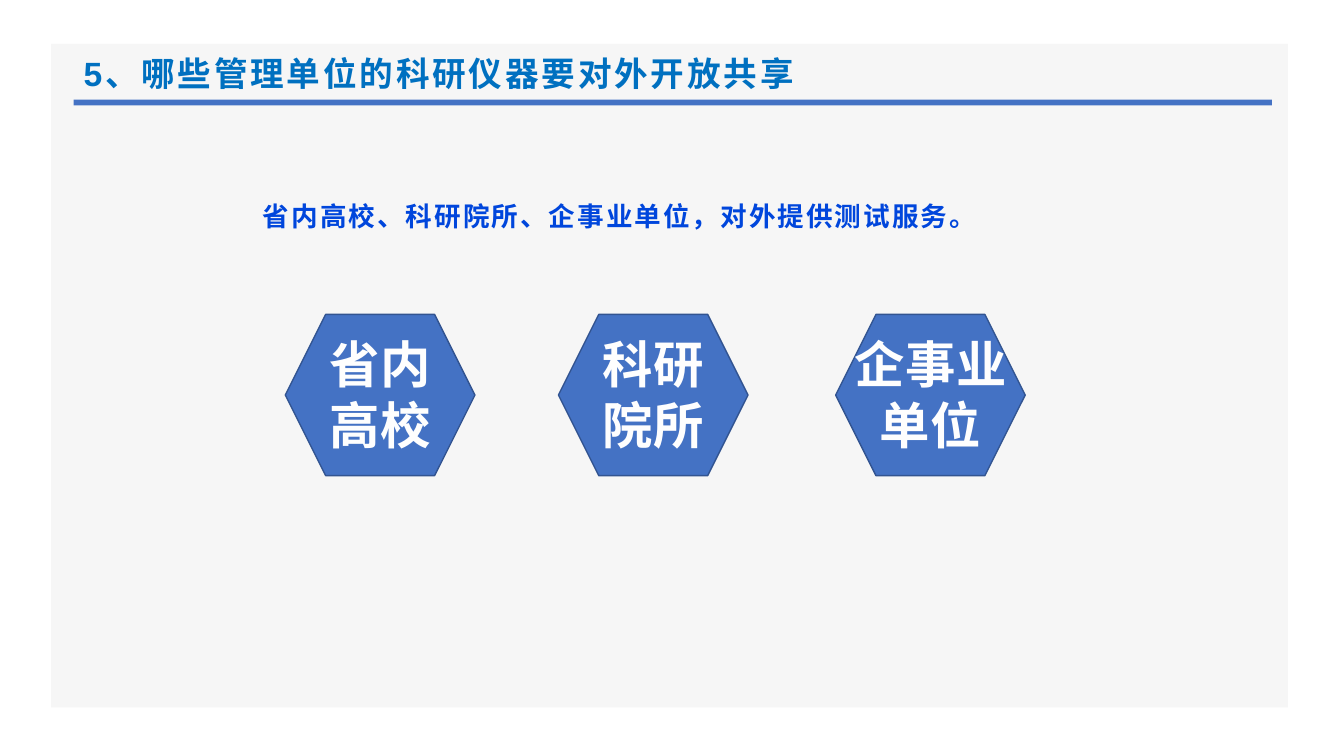
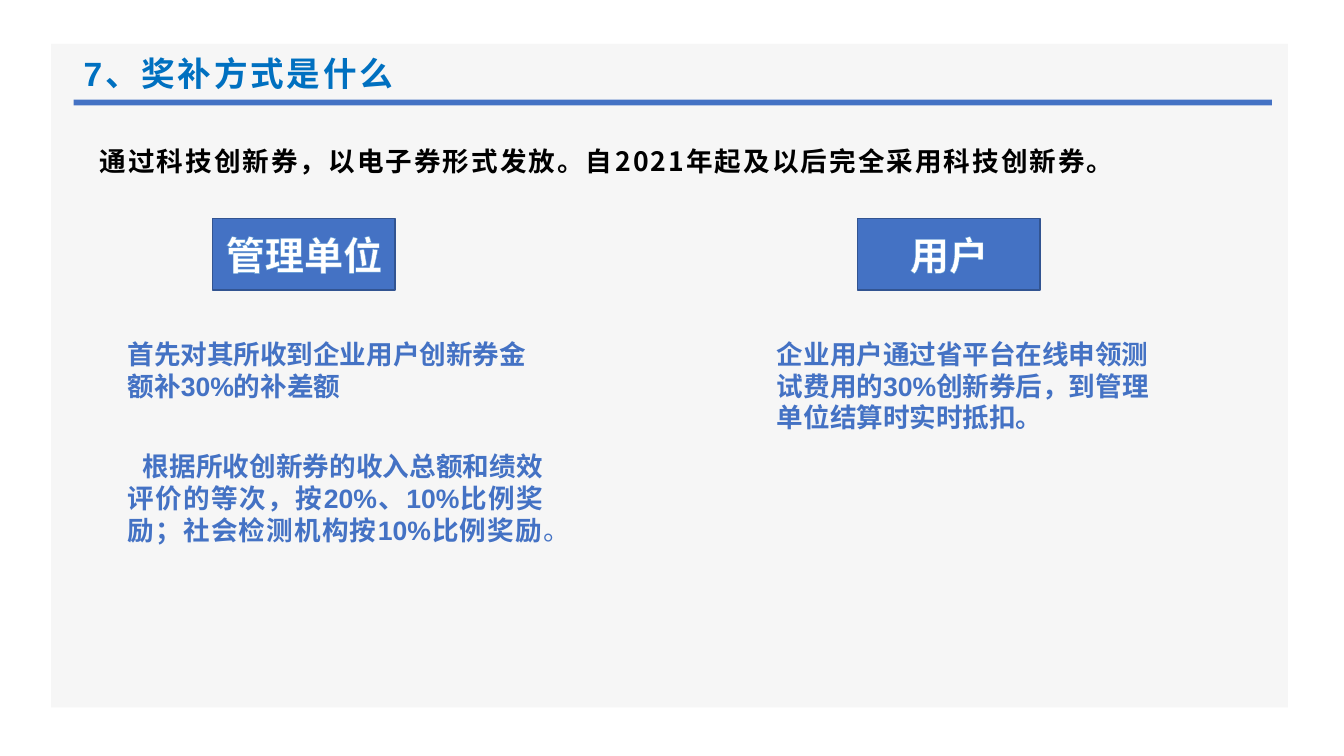
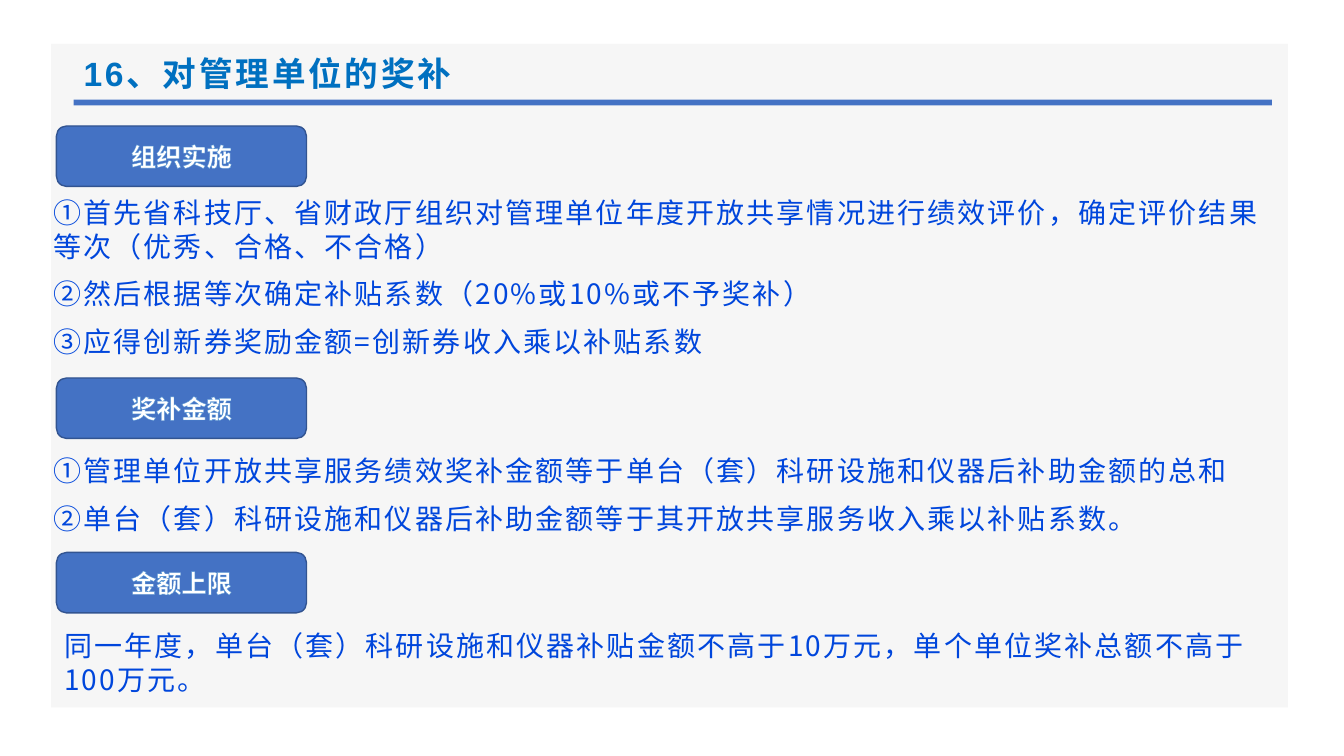
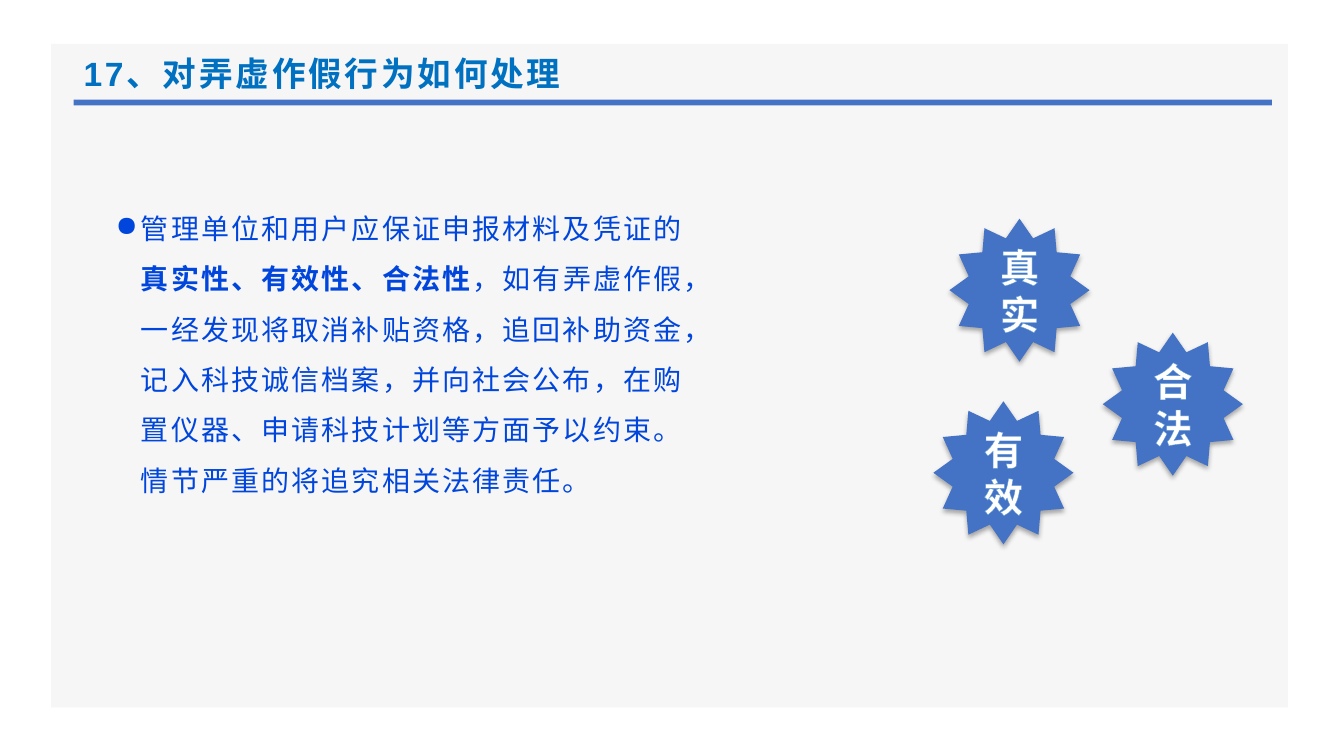
"""Build four slides on sharing and subsidising research instruments."""
from lxml import etree
from pptx import Presentation
from pptx.dml.color import RGBColor
from pptx.enum.shapes import MSO_SHAPE
from pptx.enum.text import MSO_ANCHOR, PP_ALIGN
from pptx.oxml import parse_xml
from pptx.oxml.ns import nsdecls, qn
from pptx.util import Pt

RECT, ROUND = MSO_SHAPE.RECTANGLE, MSO_SHAPE.ROUNDED_RECTANGLE
HEXAGON, STAR = MSO_SHAPE.HEXAGON, MSO_SHAPE.STAR_12_POINT
TOP, MIDDLE = MSO_ANCHOR.TOP, MSO_ANCHOR.MIDDLE
LEFT, CENTER, JUSTIFY = PP_ALIGN.LEFT, PP_ALIGN.CENTER, PP_ALIGN.JUSTIFY
NOTO = "Noto Sans CJK SC"
C = {"panel": "E7E6E6", "blue": "4472C4", "edge": "325491", "title": "0070C0",
     "text": "0046DC", "black": "000000", "white": "FFFFFF", "label": "FEFEFE",
     "glow": "5B9BD5"}


def shape(s, kind, pos, fill="blue", line=None):
    sp = s.shapes.add_shape(kind, *map(Pt, pos))
    sp.shadow.inherit = False
    sp.fill.solid()
    sp.fill.fore_color.rgb = RGBColor.from_string(C[fill])
    if line:
        sp.line.color.rgb = RGBColor.from_string(C[line])
        sp.line.width = Pt(1)
    else:
        sp.line.fill.background()
    return sp


def write(sp, *paras, size, color="white", font="Arial", bold=False, spacing=0,
          align=LEFT, anchor=TOP, wrap=True, line=1.0, after=0, margin=0,
          indent=0, bullet=None, outline=None):
    """Fill a shape with paragraphs; each | in the text switches bold."""
    tf = sp.text_frame
    tf.word_wrap, tf.vertical_anchor = wrap, anchor
    for i, text in enumerate(paras):
        p = tf.add_paragraph() if i else tf.paragraphs[0]
        p.alignment, p.line_spacing, p.space_after = align, line, Pt(after)
        pPr = p._p.get_or_add_pPr()
        pPr.set("marL", str(Pt(margin)))
        pPr.set("indent", str(Pt(indent)))
        if bullet:
            etree.SubElement(pPr, qn("a:buChar")).set("char", bullet)
        for j, part in enumerate(text.split("|")):
            r = p.add_run()
            r.text = part
            r.font.size, r.font.name = Pt(size), font
            r.font.bold = bold != (j % 2 == 1)
            r.font.color.rgb = RGBColor.from_string(C[color])
            rPr = r._r.get_or_add_rPr()
            rPr.set("spc", str(int(spacing * 100)))
            if outline:
                rPr.insert(0, parse_xml(
                    f'<a:ln w="10160" {nsdecls("a")}><a:solidFill>'
                    f'<a:srgbClr val="{C[outline]}"/></a:solidFill></a:ln>'))


prs = Presentation()
prs.slide_width, prs.slide_height = Pt(960), Pt(540)

slides = []
for title in ("5、哪些管理单位的科研仪器要对外开放共享", "7、奖补方式是什么",
              "16、对管理单位的奖补", "17、对弄虚作假行为如何处理"):
    s = prs.slides.add_slide(prs.slide_layouts[6])
    panel = shape(s, RECT, (36.5, 31.4, 883.4, 473.8), "panel")
    color = panel.fill._xPr.find(".//" + qn("a:srgbClr"))
    etree.SubElement(color, qn("a:alpha")).set("val", "35000")
    shape(s, RECT, (52.6, 71.2, 856, 4.2))
    write(s.shapes.add_textbox(*map(Pt, (52.6, 34.6, 854.6, 34.6))), title,
          size=24, color="title", bold=True, spacing=2, anchor=MIDDLE)
    slides.append(s)
units, methods, subsidy, fraud = slides

body = {"size": 20, "color": "text", "font": NOTO, "spacing": 1.5, "after": 10}
lead = {**body, "size": 19, "bold": True}
badge = {"bold": True, "align": CENTER, "anchor": MIDDLE, "outline": "glow"}
note = {"size": 19, "color": "blue", "bold": True}

write(units.shapes.add_textbox(*map(Pt, (180.7, 132.5, 549.4, 34.6))),
      "省内高校、科研院所、企事业单位，对外提供测试服务。", line=1.3, **lead)
for left, *label in ((203.8, "省内", "高校"), (398.9, "科研", "院所"),
                     (596.9, "企事业", "单位")):
    shape(units, HEXAGON, (left, 224.6, 135.4, 115.2), line="edge")
    write(units.shapes.add_textbox(*map(Pt, (left, 234.7, 135.4, 94.3))), *label,
          size=36, color="label", bold=True, spacing=0.5, align=CENTER,
          wrap=False, outline="blue")

write(methods.shapes.add_textbox(*map(Pt, (64.1, 88.6, 783.4, 48.2))),
      "通过科技创新券，以电子券形式发放。自2021年起及以后完全采用科技创新券。",
      line=1.5, **{**lead, "color": "black"})
for left, label in ((151.9, "管理单位"), (612.7, "用户")):
    write(shape(methods, RECT, (left, 156.2, 130.3, 51.1), line="edge"), label,
          size=28, **badge)
for pos, text, extra in (
        ((84.2, 237.6, 313.9, 53.3), "首先对其所收到企业用户创新券金额补30%的补差额", {}),
        ((84.2, 318.2, 311, 76.3),
         "根据所收创新券的收入总额和绩效评价的等次，按20%、10%比例奖励；"
         "社会检测机构按10%比例奖励|。", {"align": JUSTIFY, "indent": 10.8}),
        ((547.9, 237.6, 282.2, 76.3),
         "企业用户通过省平台在线申领测试费用的30%创新券后，到管理单位结算时实时抵扣。", {})):
    write(methods.shapes.add_textbox(*map(Pt, pos)), text, **note, **extra)

for top, label, pos, paras in (
        (90, "组织实施", (31, 136.1, 887, 124.6),
         ("①首先省科技厅、省财政厅组织对管理单位年度开放共享情况进行绩效评价，"
          "确定评价结果等次（优秀、合格、不合格）",
          "②然后根据等次确定补贴系数（20%或10%或不予奖补）",
          "③应得创新券奖励金额=创新券收入乘以补贴系数")),
        (270, "奖补金额", (31, 320.4, 863.3, 65.5),
         ("①管理单位开放共享服务绩效奖补金额等于单台（套）科研设施和仪器后补助金额的总和",
          "②单台（套）科研设施和仪器后补助金额等于其开放共享服务收入乘以补贴系数。")),
        (394.6, "金额上限", (38.9, 445.7, 868.3, 73.4),
         ("同一年度，单台（套）科研设施和仪器补贴金额不高于10万元，"
          "单个单位奖补总额不高于100万元。",))):
    write(shape(subsidy, ROUND, (40.3, top, 178.6, 43.2), line="edge"), label,
          size=18, **badge)
    write(subsidy.shapes.add_textbox(*map(Pt, pos)), *paras, **body)

write(fraud.shapes.add_textbox(*map(Pt, (75.6, 135.4, 422.6, 245.5))),
      "管理单位和用户应保证申报材料及凭证的|真实性、有效性、合法性|，如有弄虚作假，"
      "一经发现将取消补贴资格，追回补助资金，记入科技诚信档案，并向社会公布，"
      "在购置仪器、申请科技计划等方面予以约束。情节严重的将追究相关法律责任。",
      line=1.5, margin=18, indent=-18, bullet="●", **body)
for left, top, label in ((678.2, 156.2, "真实"), (666.7, 286.6, "有效"),
                         (787.7, 237.6, "合法")):
    sp = shape(fraud, STAR, (left, top, 100.1, 102.2))
    sp._element.spPr.find(qn("a:effectLst")).append(parse_xml(
        f'<a:outerShdw {nsdecls("a")} blurRad="{Pt(3.5)}" dist="{Pt(2.2)}" '
        'dir="5400000" rotWithShape="0"><a:srgbClr val="000000">'
        '<a:alpha val="32000"/></a:srgbClr></a:outerShdw>'))
    write(sp, label, size=28, **badge)

prs.save("out.pptx")
